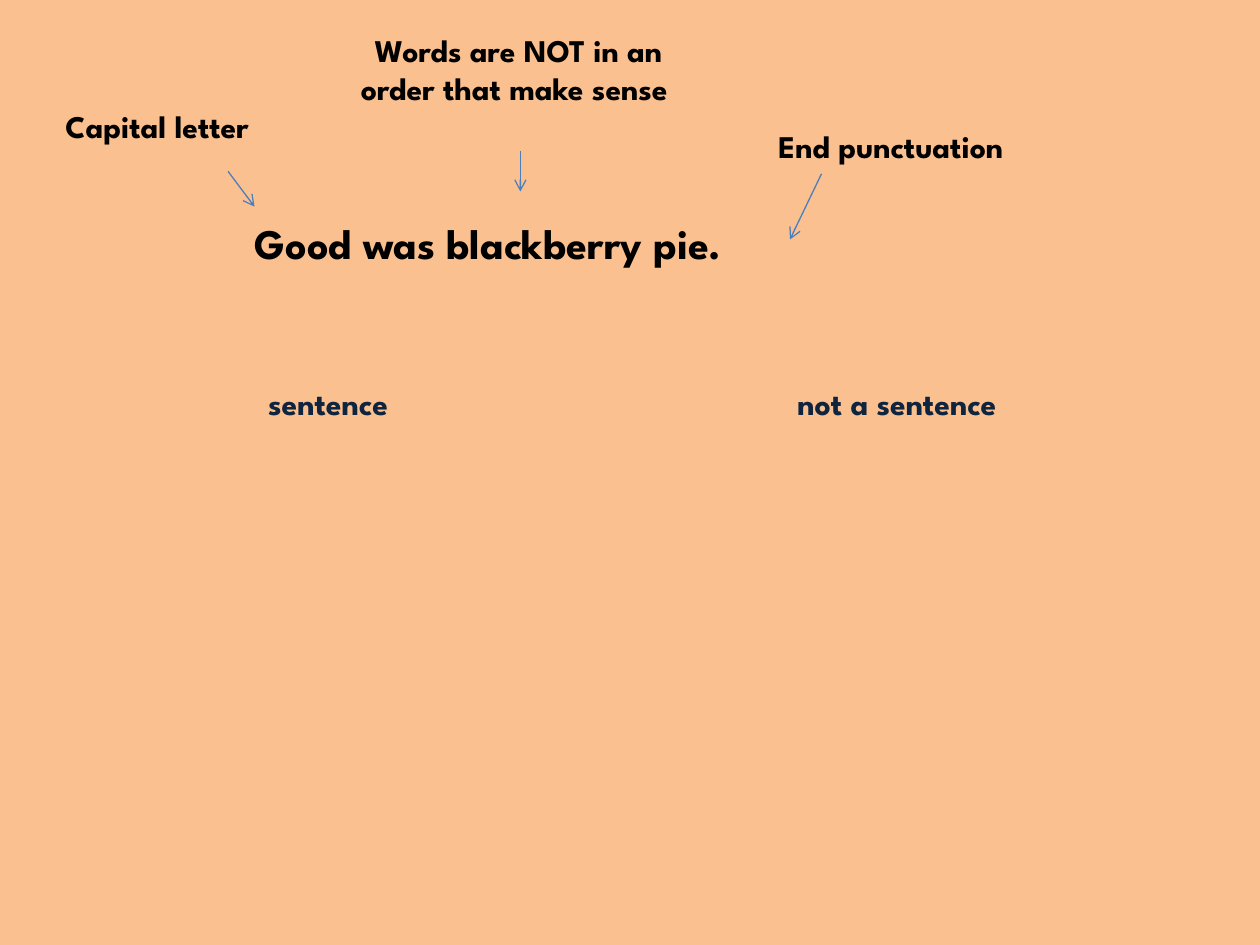
"""Build a slide that labels the parts of a jumbled sentence."""
from typing import NamedTuple

from lxml.etree import SubElement
from pptx import Presentation
from pptx.dml.color import RGBColor
from pptx.enum.shapes import MSO_CONNECTOR
from pptx.enum.text import MSO_ANCHOR, MSO_AUTO_SIZE, PP_ALIGN
from pptx.oxml.ns import qn
from pptx.shapes.autoshape import Shape
from pptx.slide import Slide
from pptx.util import Inches, Pt

FONT = "League Spartan"
COLORS = {
    "background": "FAC090",
    "text": "000000",
    "choice": "0F243E",
    "arrow": "4B7EBC",
}


class Label(NamedTuple):
    text: str
    left: float
    top: float
    width: float
    height: float = 0.4
    size: int = 18
    color: str = "text"
    align: PP_ALIGN = PP_ALIGN.LEFT


class Arrow(NamedTuple):
    start: tuple[float, float]
    end: tuple[float, float]


SENTENCE = Label("Good was blackberry pie.", 1.92, 1.68, 6, 0.5, size=24)
LABELS = [
    Label("sentence", 2.03, 3, 1.58, color="choice"),
    Label("not a sentence", 6.23, 3, 2.92, color="choice"),
    Label("Capital letter", 0.42, 0.8, 2.25),
    Label("Words are NOT in an order that make sense ", 2.7, 0.2, 2.83, 1.01,
          align=PP_ALIGN.CENTER),
    Label("End punctuation", 6.08, 0.96, 2.42),
]
ARROWS = [
    Arrow((1.81, 1.36), (2.02, 1.64)),
    Arrow((4.13, 1.2), (4.13, 1.52)),
    Arrow((6.52, 1.38), (6.27, 1.9)),
]


def color_of(name: str) -> RGBColor:
    return RGBColor.from_string(COLORS[name])


def fill_label(box: Shape, label: Label) -> None:
    box.left, box.top = Inches(label.left), Inches(label.top)
    box.width, box.height = Inches(label.width), Inches(label.height)
    frame = box.text_frame
    frame.word_wrap = True
    frame.auto_size = MSO_AUTO_SIZE.SHAPE_TO_FIT_TEXT
    frame.vertical_anchor = MSO_ANCHOR.TOP
    para = frame.paragraphs[0]
    para.alignment = label.align
    span = para.add_run()
    span.text = label.text
    span.font.name = FONT
    span.font.size = Pt(label.size)
    span.font.bold = True
    span.font.color.rgb = color_of(label.color)


def add_label(page: Slide, label: Label) -> None:
    fill_label(page.shapes.add_textbox(0, 0, 0, 0), label)


def add_arrow(page: Slide, arrow: Arrow) -> None:
    ends = [Inches(value) for value in (*arrow.start, *arrow.end)]
    connector = page.shapes.add_connector(MSO_CONNECTOR.STRAIGHT, *ends)
    connector.line.color.rgb = color_of("arrow")
    connector.line.width = Pt(0.75)
    SubElement(connector.line._get_or_add_ln(), qn("a:tailEnd"), type="arrow")
    SubElement(connector._element.spPr, qn("a:effectLst"))


def main() -> None:
    deck = Presentation()
    deck.slide_width, deck.slide_height = Inches(10), Inches(7.5)
    page = deck.slides.add_slide(deck.slide_layouts.get_by_name("Title Only"))
    page.background.fill.solid()
    page.background.fill.fore_color.rgb = color_of("background")
    fill_label(page.shapes.title, SENTENCE)
    for label in LABELS:
        add_label(page, label)
    for arrow in ARROWS:
        add_arrow(page, arrow)
    deck.save("out.pptx")


if __name__ == "__main__":
    main()
